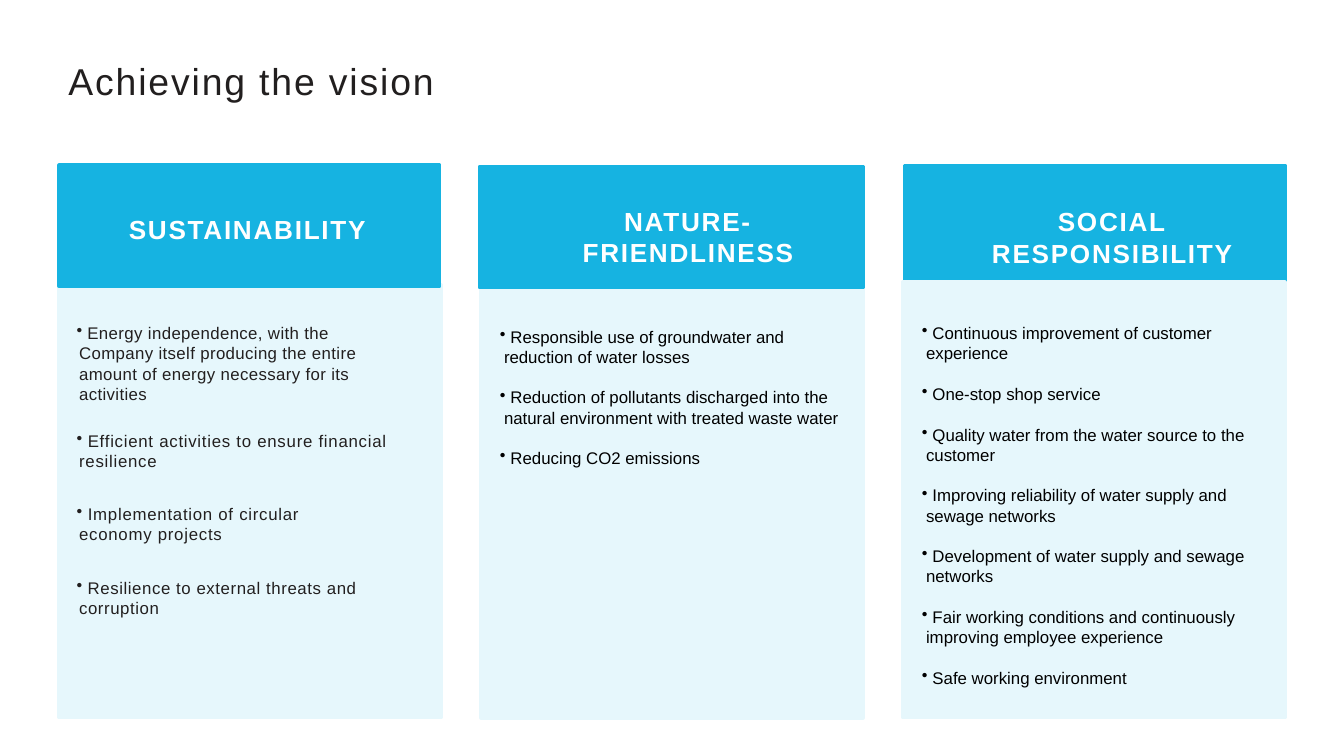
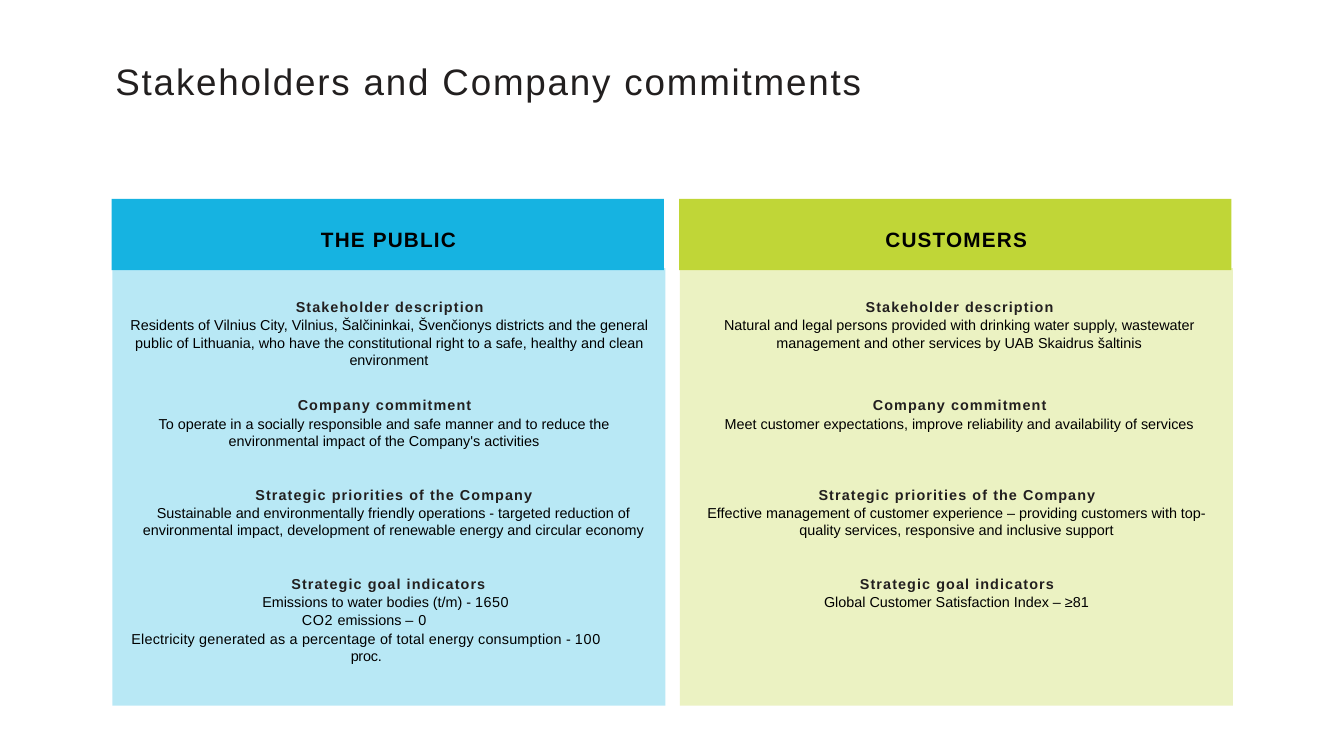
from lxml.etree import SubElement
from pptx import Presentation
from pptx.dml.color import RGBColor
from pptx.enum.shapes import MSO_SHAPE as Preset
from pptx.enum.text import MSO_ANCHOR as Anchor, PP_ALIGN as Align
from pptx.oxml.ns import qn
from pptx.util import Pt

INK = RGBColor(0x22, 0x1F, 0x1F)
BLACK = RGBColor(0x00, 0x00, 0x00)
WHITE = RGBColor(0xFF, 0xFF, 0xFF)
BLUE = RGBColor(0x16, 0xB3, 0xE1)
PALE_BLUE = RGBColor(0xE6, 0xF7, 0xFC)
LIME = RGBColor(0xC0, 0xD6, 0x37)
FONT = "Arial"


class Board:
    """Holds the deck, its text style and the page being drawn."""

    def __init__(self):
        self.deck = Presentation()
        self.deck.slide_width, self.deck.slide_height = Pt(720), Pt(405)
        self.page = None

    def new_page(self, title, frame, inset, size):
        self.page = self.deck.slides.add_slide(self.deck.slide_layouts[6])
        box = self.text(frame, inset)
        self.span(self.para(box, margin=2), title, size, INK, spacing=1)

    def plate(self, frame, color, outlined=False):
        box = self.page.shapes.add_shape(Preset.RECTANGLE, *map(Pt, frame))
        box.shadow.inherit = False
        box.fill.solid()
        box.fill.fore_color.rgb = color
        if outlined:
            box.line.color.rgb = color
            box.line.width = Pt(2)
        else:
            box.line.fill.background()
        return box

    def panel(self, frame, color, opacity):
        left, top, width, height = frame
        right, bottom = left + width, top + height
        outline = self.page.shapes.build_freeform(Pt(right), Pt(top))
        corners = [(left, top), (left, bottom), (right, bottom)]
        outline.add_line_segments([(Pt(x), Pt(y)) for x, y in corners])
        box = outline.convert_to_shape()
        box.shadow.inherit = False
        box.fill.solid()
        box.fill.fore_color.rgb = color
        tint = box.fill._xPr.find(qn("a:solidFill"))[0]
        SubElement(tint, qn("a:alpha"), val=str(opacity * 1000))
        box.line.fill.background()

    def text(self, frame, inset=0, box=None):
        box = box or self.page.shapes.add_textbox(*map(Pt, frame))
        body = box.text_frame
        body.word_wrap = True
        body.vertical_anchor = Anchor.TOP
        body.margin_left = body.margin_right = body.margin_bottom = 0
        body.margin_top = Pt(inset)
        return body

    def para(self, body, align=Align.LEFT, before=0, margin=0, indent=0, right=0, bullet=False):
        first = body.paragraphs[0]
        para = body.add_paragraph() if first.runs else first
        para.alignment = align
        para.space_before = Pt(before)
        props = para._p.get_or_add_pPr()
        for name, value in (("marL", margin), ("indent", indent), ("marR", right)):
            props.set(name, str(int(Pt(value))))
        if bullet:
            SubElement(props, qn("a:buChar"), char="•")
        return para

    def span(self, para, words, size, color, bold=False, spacing=0):
        span = para.add_run()
        span.text = words
        span.font.name = FONT
        span.font.size = Pt(size)
        span.font.bold = bold
        span.font.color.rgb = color
        span._r.get_or_add_rPr().set("spc", str(round(spacing * 100)))

    def label(self, frame, words, inset, margin):
        body = self.text(frame, inset, self.plate(frame, BLUE))
        self.span(self.para(body, Align.CENTER, margin=margin), words, 14, WHITE, True, 0.9)

    def bullets(self, frame, items, color, margin, indent):
        body = self.text(frame)
        for words, before, spacing, right in items:
            para = self.para(body, before=before, margin=margin, indent=indent,
                             right=right, bullet=True)
            self.span(para, " " + words, 9, color, spacing=spacing)

    def heading(self, frame, words, inset):
        para = self.para(self.text(frame, inset), Align.CENTER)
        self.span(para, words, 11.1, BLACK, True, 0.6)

    def topic(self, frame, title, lines):
        body = self.text(frame, 0.7)
        self.span(self.para(body, Align.CENTER, margin=0.7), title, 7.7, INK, True, 0.6)
        for number, spans in enumerate(lines):
            para = self.para(body, Align.CENTER, before=0.5, right=23 if number else 0)
            for words, spacing in spans:
                self.span(para, words, 7.7, BLACK, spacing=spacing)


def evenly(lines, gap=10.9):
    return [(words, gap, 0, 0) for words in lines]


def draw_vision(board):
    board.new_page("Achieving the vision", (34.6, 23.8, 461.5, 31.7), 7.2, 20)
    sustainability = [
        ("Energy independence, with the Company itself producing the entire amount of "
         "energy necessary for its activities", 0, 0.2, 27),
        ("Efficient activities to ensure financial resilience", 14.3, 0.4, 0),
        ("Implementation of circular economy projects", 17.7, 0.4, 54),
        ("Resilience to external threats and corruption", 17.7, 0.3, 0),
    ]
    nature = evenly([
        "Responsible use of groundwater and reduction of water losses",
        "Reduction of pollutants discharged into the natural environment with treated "
        "waste water",
        "Reducing CO2 emissions",
    ])
    nature[0] = nature[0][:3] + (10,)
    social = evenly([
        "Continuous improvement of customer experience",
        "One-stop shop service",
        "Quality water from the water source to the customer",
        "Improving reliability of water supply and sewage networks",
        "Development of water supply and sewage networks",
        "Fair working conditions and continuously improving employee experience",
        "Safe working environment",
    ])
    columns = [
        ([((31.7, 152.6, 204.5, 231.8), PALE_BLUE), ((31.7, 88.6, 203.8, 64.8), BLUE)],
         "SUSTAINABILITY", (42.5, 114.5, 180, 17.3), 0, 0,
         sustainability, (33.8, 173, 198, 157), INK, 8.6, -1.4),
        ([((257.8, 150.5, 204.5, 234), PALE_BLUE), ((257, 89.3, 205.2, 64.8), BLUE)],
         "NATURE- FRIENDLINESS", (267.8, 97.9, 193, 46.1), 12.2, 8.6,
         nature, (260.6, 174.8, 198, 78), BLACK, 9.4, -2.2),
        ([((484.6, 88.6, 203.8, 64.1), BLUE), ((483.8, 151.2, 204.5, 233.3), PALE_BLUE)],
         "SOCIAL RESPONSIBILITY", (499, 97.9, 174.2, 44.6), 12.2, 19.4,
         social, (486.7, 173, 198.7, 196), BLACK, 9.4, -2.2),
    ]
    for plates, name, name_frame, inset, shift, items, frame, color, margin, indent in columns:
        for plate_frame, plate_color in plates:
            board.plate(plate_frame, plate_color, outlined=True)
        board.label(name_frame, name, inset, shift)
        board.bullets(frame, items, color, margin, indent)


def draw_stakeholders(board):
    board.new_page("Stakeholders and Company commitments", (59.8, 31, 473.8, 24.5), 0.7, 19.7)
    titles = ["Stakeholder description", "Company commitment",
              "Strategic priorities of the Company", "Strategic goal indicators"]
    tops = [159.1, 211.7, 259.5, 307.4]
    public = [
        (69.8, [[("Residents of Vilnius City, Vilnius, Šalčininkai, Švenčionys districts and "
                  "the general public of Lithuania, who have the constitutional right to a "
                  "safe, healthy and clean environment", 0)]]),
        (67, [[("To operate in a socially responsible and safe manner and to reduce the "
                "environmental impact of the Company's activities", 0)]]),
        (72, [[("Sustainable and environmentally friendly operations - targeted reduction of "
                "environmental impact, development of renewable energy and circular economy",
                0)]]),
        (69.1, [[("Emissions to water bodies (t/m) - ", 0), ("1650 ", 0.3)],
                [("CO2 ", 0.3), ("emissions ", 0), ("– ", 0.3), ("0 ", 0.1)],
                [("Electricity generated as a percentage of total energy consumption ", 0.1),
                 ("- ", 0), ("100 ", 0.4), ("proc.", -0.1)]]),
    ]
    customers = [
        (375.1, [[("Natural and legal persons provided with drinking water supply, wastewater "
                   "management and other services by UAB Skaidrus šaltinis", 0)]]),
        (375.1, [[("Meet customer expectations, improve reliability and availability of "
                   "services", 0)]]),
        (373.7, [[("Effective management of customer experience – providing customers with "
                   "top-quality services, responsive and inclusive support", 0)]]),
        (373.7, [[("Global Customer Satisfaction Index – ≥81", 0)]]),
    ]
    groups = [
        (59.8, BLUE, "THE PUBLIC", (103, 110.9, 210.2, 24.5), 10.8, public),
        (363.8, LIME, "CUSTOMERS", (364.3, 109.4, 295.9, 25.9), 12.2, customers),
    ]
    for left, color, name, name_frame, inset, topics in groups:
        board.plate((left, 106.6, 295.9, 38.2), color)
        board.panel((left + 0.4, 143.6, 296.3, 234.4), color, 30)
        board.heading(name_frame, name, inset)
        for title, top, (topic_left, lines) in zip(titles, tops, topics):
            board.topic((topic_left, top, 277.2, 38), title, lines)


def main():
    board = Board()
    draw_vision(board)
    draw_stakeholders(board)
    board.deck.save("out.pptx")


if __name__ == "__main__":
    main()
